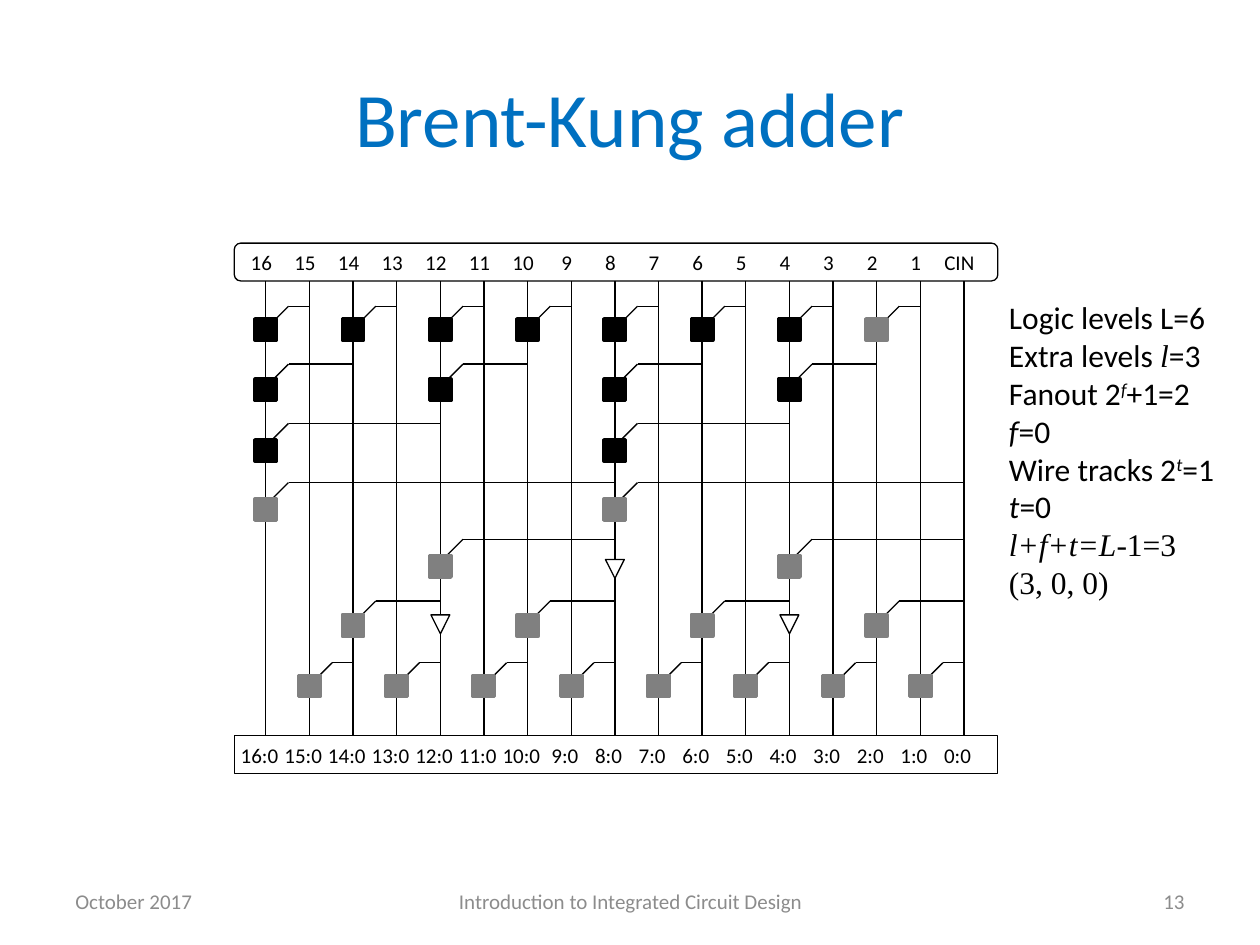
"""Build the Brent-Kung adder slide with its 16-bit prefix diagram."""
from lxml import etree
from pptx import Presentation
from pptx.dml.color import RGBColor
from pptx.enum.shapes import MSO_CONNECTOR, MSO_SHAPE
from pptx.enum.text import MSO_ANCHOR, PP_ALIGN
from pptx.oxml.ns import qn
from pptx.util import Inches, Pt

STRAIGHT = MSO_CONNECTOR.STRAIGHT
RECTANGLE = MSO_SHAPE.RECTANGLE
ROUNDED = MSO_SHAPE.FLOWCHART_ALTERNATE_PROCESS
TRIANGLE = MSO_SHAPE.ISOSCELES_TRIANGLE
MIDDLE = MSO_ANCHOR.MIDDLE
LEFT, CENTER, RIGHT = PP_ALIGN.LEFT, PP_ALIGN.CENTER, PP_ALIGN.RIGHT
BLACK, WHITE, GRAY = "000000", "FFFFFF", "808080"
BITS = 16
CELL, BUFFER = 0.17, 0.15
BAR_LEFT, BAR_INSET = 1.86, 0.02

presentation = Presentation()
presentation.slide_width = Inches(10)
presentation.slide_height = Inches(7.5)
slide = presentation.slides.add_slide(presentation.slide_layouts[5])
shapes = slide.shapes


def add_line(x1, y1, x2, y2):
    line = shapes.add_connector(STRAIGHT, Inches(x1), Inches(y1), Inches(x2), Inches(y2))
    line.line.color.rgb = RGBColor.from_string(BLACK)
    line.line.width = Pt(0.75)
    etree.SubElement(line._element.spPr, qn("a:effectLst"))


def add_block(kind, left, top, width, height, fill, outline, weight):
    block = shapes.add_shape(kind, Inches(left), Inches(top), Inches(width), Inches(height))
    block.shadow.inherit = False
    block.fill.solid()
    block.fill.fore_color.rgb = RGBColor.from_string(fill)
    block.line.color.rgb = RGBColor.from_string(outline)
    block.line.width = Pt(weight)
    return block


title = shapes.title
title.left, title.top, title.width, title.height = Inches(0.5), Inches(0.3), Inches(9), Inches(1.25)
title.text_frame.text = "Brent-Kung adder"
title.text_frame.vertical_anchor = MIDDLE
title_paragraph = title.text_frame.paragraphs[0]
title_paragraph.alignment = CENTER
title_font = title_paragraph.runs[0].font
title_font.name, title_font.size = "Calibri", Pt(44)
title_font.color.rgb = RGBColor.from_string("0070C0")

footers = [
    (0.5, 2.33, LEFT, "October 2017"),
    (3.42, 3.17, CENTER, "Introduction to Integrated Circuit Design"),
    (7.17, 2.33, RIGHT, "13"),
]
for left, width, alignment, text in footers:
    footer = shapes.add_textbox(Inches(left), Inches(6.95), Inches(width), Inches(0.4))
    footer.text_frame.word_wrap = True
    footer.text_frame.vertical_anchor = MIDDLE
    footer.text_frame.text = text
    paragraph = footer.text_frame.paragraphs[0]
    paragraph.alignment = alignment
    font = paragraph.runs[0].font
    font.name, font.size = "Calibri", Pt(12)
    font.color.rgb = RGBColor.from_string("8C8C8C")

columns = [7.65 - (7.65 - 2.11) / BITS * bit for bit in range(BITS + 1)]
for x in columns:
    add_line(x, 2.06, x, 5.99)

input_labels = [str(bit) for bit in range(BITS, 0, -1)] + ["CIN"]
output_labels = [f"{bit}:0" for bit in range(BITS, -1, -1)]
for kind, top, labels in [(ROUNDED, 1.93, input_labels), (RECTANGLE, 5.84, output_labels)]:
    bar = add_block(kind, BAR_LEFT, top, 6.06, 0.3, WHITE, BLACK, 0.75)
    frame = bar.text_frame
    frame.word_wrap = True
    frame.vertical_anchor = MIDDLE
    frame.margin_left = frame.margin_right = Inches(BAR_INSET)
    frame.margin_top = frame.margin_bottom = Inches(0.04)
    frame.text = "\t" + "\t".join(labels)
    paragraph = frame.paragraphs[0]
    paragraph.alignment = LEFT
    font = paragraph.runs[0].font
    font.name, font.size = "Calibri", Pt(12)
    font.color.rgb = RGBColor.from_string(BLACK)
    tab_list = etree.SubElement(paragraph._p.get_or_add_pPr(), qn("a:tabLst"))
    for x in reversed(columns):
        position = Inches(x - 0.05 - BAR_LEFT - BAR_INSET)
        etree.SubElement(tab_list, qn("a:tab"), pos=str(position), algn="ctr")

stages = [
    (2.43, 2.53, 1, range(16, 3, -2), BLACK),
    (2.43, 2.53, 1, [2], GRAY),
    (2.89, 3.01, 2, range(16, 3, -4), BLACK),
    (3.36, 3.49, 4, [16, 8], BLACK),
    (3.83, 3.96, 8, [16, 8], GRAY),
    (4.28, 4.41, 4, [12, 4], GRAY),
    (4.77, 4.88, 2, range(14, 1, -4), GRAY),
    (5.26, 5.36, 1, range(15, 0, -2), GRAY),
]
for wire_top, cell_top, span, bits, color in stages:
    for bit in bits:
        x = columns[bit]
        add_line(x + 0.18, wire_top, x - 0.02, wire_top + 0.2)
        add_line(columns[bit - span], wire_top, x + 0.18, wire_top)
        add_block(RECTANGLE, x - CELL / 2, cell_top, CELL, CELL, color, color, 2)

for bit, top in [(8, 4.44), (12, 4.88), (4, 4.88)]:
    buffer = add_block(TRIANGLE, columns[bit] - BUFFER / 2, top, BUFFER, BUFFER, WHITE, BLACK, 0.75)
    buffer.rotation = 180

SANS, ITALIC, POWER = ("Calibri", False, 0), ("Calibri", True, 0), ("Calibri", True, 30000)
SERIF, SERIF_ITALIC = ("Times New Roman", False, 0), ("Times New Roman", True, 0)
notes = [
    [("Logic levels L=6", SANS)],
    [("Extra levels ", SANS), ("l", SERIF_ITALIC), ("=3", SANS)],
    [("Fanout 2", SANS), ("f", POWER), ("+1=2", SANS)],
    [("f", ITALIC), ("=0", SANS)],
    [("Wire tracks 2", SANS), ("t", POWER), ("=1", SANS)],
    [("t", ITALIC), ("=0", SANS)],
    [("l+f+t=L", SERIF_ITALIC), ("-1=3", SERIF)],
    [("(3, 0, 0)", SERIF)],
]
note_box = shapes.add_textbox(Inches(7.91), Inches(2.32), Inches(1.86), Inches(2.83))
note_box.text_frame.word_wrap = True
for index, pieces in enumerate(notes):
    paragraph = note_box.text_frame.add_paragraph() if index else note_box.text_frame.paragraphs[0]
    for text, (typeface, italic, baseline) in pieces:
        run = paragraph.add_run()
        run.text = text
        run.font.name, run.font.size, run.font.italic = typeface, Pt(18), italic
        run.font.color.rgb = RGBColor.from_string(BLACK)
        if baseline:
            run.font._element.set("baseline", str(baseline))

presentation.save("out.pptx")
